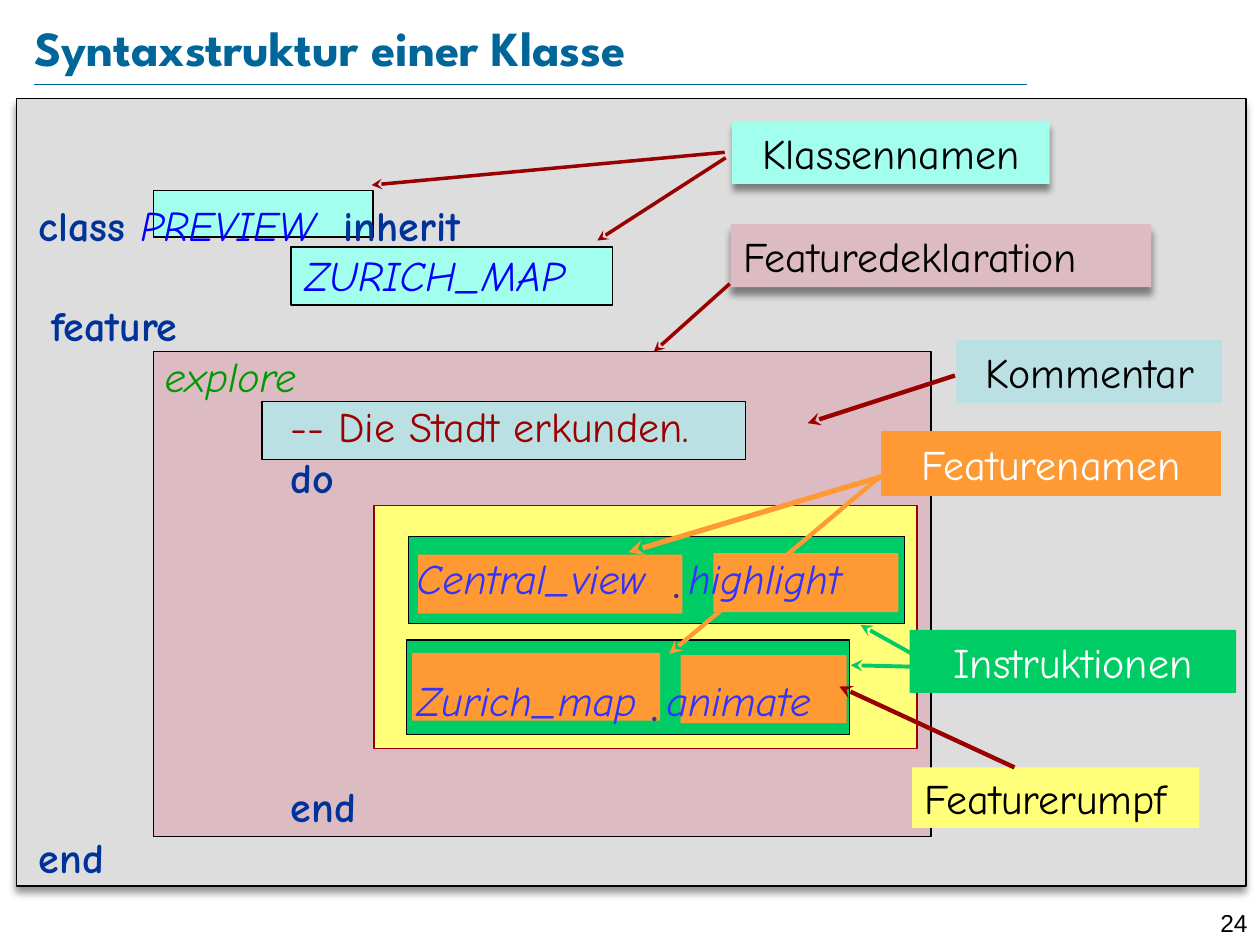
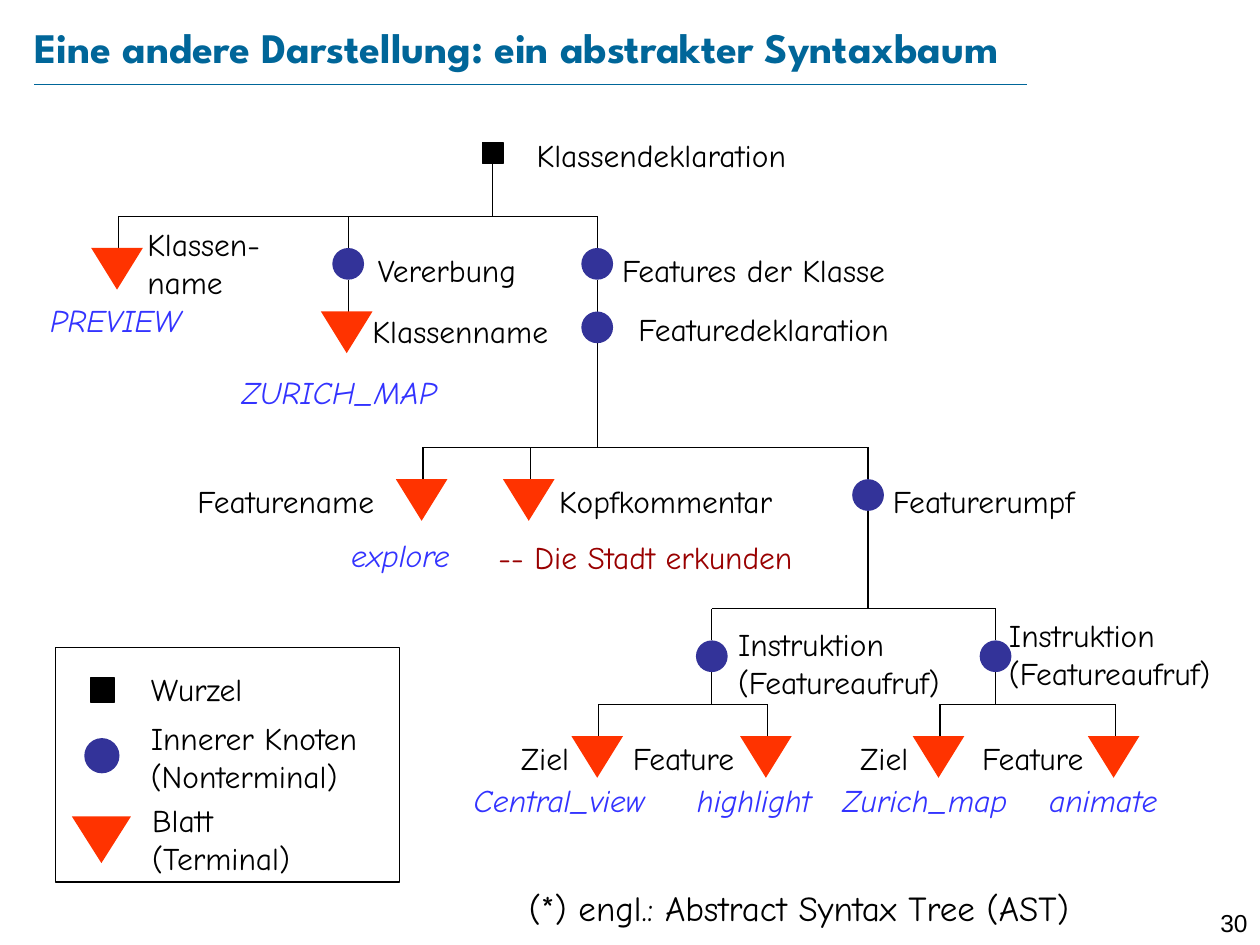
from lxml.etree import SubElement
from pptx import Presentation
from pptx.dml.color import RGBColor
from pptx.enum.shapes import MSO_CONNECTOR, MSO_SHAPE
from pptx.enum.text import MSO_ANCHOR, PP_ALIGN
from pptx.oxml.ns import qn
from pptx.util import Cm, Pt

BODY_FONT = "Comic Neue"
BLACK, WHITE = "000000", "FFFFFF"
TITLE_BLUE = "006699"
DARK_RED = "990000"
GREY = "DDDDDD"
ROSE = "DCBCC2"
AQUA = "A3FFED"
PALE_BLUE = "BBE0E3"
YELLOW = "FFFF79"
GREEN = "00CC66"
ORANGE = "FF9933"
KEYWORD_BLUE = "003399"
CLASS_BLUE = "0000FF"
NAME_BLUE = "3333FF"
NODE_BLUE = "333399"
FEATURE_GREEN = "009900"
LEAF_RED = "FF3300"

CODE_TAB = 2.54
CODE_GAP = 29
STEM = 0.64
NODE_SIZE = 0.64
LEAF_SIZE = (1.04, 0.84)


def color(hex_string):
    return RGBColor.from_string(hex_string)


def add_run(paragraph, text, size, hex_color, font=BODY_FONT, bold=False, italic=False):
    run = paragraph.add_run()
    run.text = text
    run.font.name = font
    run.font.size = Pt(size)
    run.font.bold = bold
    run.font.italic = italic
    run.font.color.rgb = color(hex_color)
    return run


def add_text(slide, text, left, top, width, height=1.02, size=18, hex_color=BLACK,
             align=PP_ALIGN.LEFT, **style):
    """Add a text box with one paragraph per line of text."""
    box = slide.shapes.add_textbox(Cm(left), Cm(top), Cm(width), Cm(height))
    frame = box.text_frame
    frame.word_wrap = True
    for index, line in enumerate(text.split("\n")):
        paragraph = frame.add_paragraph() if index else frame.paragraphs[0]
        paragraph.alignment = align
        add_run(paragraph, line, size, hex_color, **style)
    return frame


def add_box(slide, left, top, width, height, fill=None, line=None,
            kind=MSO_SHAPE.RECTANGLE, shadow=False):
    shape = slide.shapes.add_shape(kind, Cm(left), Cm(top), Cm(width), Cm(height))
    shape.shadow.inherit = False
    if fill:
        shape.fill.solid()
        shape.fill.fore_color.rgb = color(fill)
    else:
        shape.fill.background()
    if line:
        shape.line.color.rgb = color(line)
        shape.line.width = Pt(0.75)
    else:
        shape.line.fill.background()
    if shadow:
        effects = shape._element.spPr.find(qn("a:effectLst"))
        outer = SubElement(effects, qn("a:outerShdw"), blurRad=str(Pt(4)),
                           dist=str(Pt(4)), dir="5400000", rotWithShape="0")
        black = SubElement(outer, qn("a:srgbClr"), val=BLACK)
        SubElement(black, qn("a:alpha"), val="43000")
    return shape


def add_callout(slide, text, left, top, width, fill, text_color=BLACK,
                align=PP_ALIGN.CENTER, height=1.27, **look):
    shape = add_box(slide, left, top, width, height, fill, **look)
    frame = shape.text_frame
    frame.word_wrap = True
    frame.vertical_anchor = MSO_ANCHOR.MIDDLE
    paragraph = frame.paragraphs[0]
    paragraph.alignment = align
    add_run(paragraph, text, 24, text_color)


def add_line(slide, start, end, hex_color=BLACK, width=0.75, arrow=False):
    line = slide.shapes.add_connector(
        MSO_CONNECTOR.STRAIGHT, *(Cm(value) for value in (*start, *end)))
    line.line.color.rgb = color(hex_color)
    line.line.width = Pt(width)
    if arrow:
        SubElement(line.line._get_or_add_ln(), qn("a:tailEnd"), type="stealth")
    SubElement(line._element.spPr, qn("a:effectLst"))


def add_slide(presentation, title, number, title_size):
    """Add a blank slide with the shared title, rule and slide number."""
    slide = presentation.slides.add_slide(presentation.slide_layouts[6])
    add_line(slide, (0.69, 1.7), (20.7, 1.7), TITLE_BLUE, 0.25)
    add_text(slide, number, 24, 18.19, 1.4, 0.61, 14, align=PP_ALIGN.RIGHT, font="Arial")
    frame = add_text(slide, title, 0.69, 0.33, 22.07, 1.22, title_size, TITLE_BLUE,
                     font="League Spartan", bold=True)
    frame.margin_left = frame.margin_top = frame.margin_right = frame.margin_bottom = 0
    frame.vertical_anchor = MSO_ANCHOR.MIDDLE
    return slide


def keyword(text):
    return text, KEYWORD_BLUE, {"bold": True}


def name(text, hex_color=NAME_BLUE):
    return text, hex_color, {"italic": True}


def add_code(slide):
    """Add the class text; each line has tab stops, space before, spacing and runs."""
    dot = ("• ", NODE_BLUE, {})
    lines = [
        ([6.15], 0, 1.5, [keyword("class "), name("PREVIEW", CLASS_BLUE), keyword("\tinherit")]),
        ([5.36], 0, 1, [name("\tZURICH_MAP", CLASS_BLUE)]),
        ([0.25], 0, 1, [keyword("\tfeature")]),
        ([CODE_TAB], 0, 1, [name("\texplore", FEATURE_GREEN)]),
        ([2 * CODE_TAB], 0, 1, [("\t-- Die Stadt erkunden.", DARK_RED, {})]),
        ([2 * CODE_TAB], 0, 1, [keyword("\tdo")]),
        ([3 * CODE_TAB, 12.78], CODE_GAP, 1, [name("\tCentral_view\t"), dot, name("highlight")]),
        ([3 * CODE_TAB], CODE_GAP, 1.3, [name("\tZurich_map "), dot, name("animate")]),
        ([2 * CODE_TAB], CODE_GAP, 1, [keyword("\tend")]),
        ([], 0, 1, [keyword("end")]),
    ]
    box = slide.shapes.add_textbox(Cm(0.53), Cm(3.38), Cm(19.05), Cm(14.4))
    frame = box.text_frame
    frame.word_wrap = True
    for index, (stops, before, spacing, runs) in enumerate(lines):
        paragraph = frame.add_paragraph() if index else frame.paragraphs[0]
        paragraph.line_spacing = spacing
        if before:
            paragraph.space_before = Pt(before)
        if stops:
            tabs = SubElement(paragraph._p.get_or_add_pPr(), qn("a:tabLst"))
            for stop in stops:
                SubElement(tabs, qn("a:tab"), pos=str(Cm(stop)), algn="l")
        for text, hex_color, style in runs:
            run = add_run(paragraph, text, 24, hex_color, **style)
            if text == dot[0]:
                run.font._element.set("baseline", "-20000")


def build_class_structure(presentation):
    slide = add_slide(presentation, "Syntaxstruktur einer Klasse", "24", 28)

    def arrow(start, end, hex_color=DARK_RED, width=2.0):
        add_line(slide, start, end, hex_color, width, arrow=True)

    add_box(slide, 0.33, 1.98, 24.79, 15.88, GREY, BLACK, shadow=True)
    add_box(slide, 3.1, 7.09, 15.67, 9.78, ROSE, BLACK)
    add_callout(slide, "Featuredeklaration", 14.73, 4.52, 8.48, ROSE,
                align=PP_ALIGN.LEFT, shadow=True)
    arrow((14.71, 5.72), (13.18, 7.09))
    add_box(slide, 3.1, 3.84, 4.42, 0.94, AQUA, BLACK)
    add_box(slide, 5.87, 4.98, 6.48, 1.17, AQUA, BLACK)
    add_callout(slide, "Klassennamen", 14.76, 2.44, 6.4, AQUA, shadow=True)
    arrow((14.63, 3.18), (12.04, 4.85))
    add_box(slide, 5.28, 8.1, 9.75, 1.17, PALE_BLUE, BLACK)
    add_callout(slide, "Kommentar", 19.28, 6.86, 5.36, PALE_BLUE)
    arrow((19.25, 7.57), (16.28, 8.53), width=2.5)
    add_box(slide, 7.54, 10.19, 10.95, 4.9, YELLOW, DARK_RED)
    add_callout(slide, "Featurerumpf", 18.39, 15.47, 5.79, YELLOW,
                align=PP_ALIGN.LEFT, height=1.22)
    add_box(slide, 8.2, 12.9, 8.92, 1.91, GREEN, BLACK)
    add_box(slide, 8.23, 10.82, 10.01, 1.75, GREEN, BLACK)
    arrow((18.44, 13.21), (17.35, 12.6), GREEN, 2.25)
    for left, top, width, height in [(13.72, 13.21, 3.35, 1.37), (8.31, 13.16, 5, 1.37),
                                     (14.38, 11.15, 3.73, 1.19), (8.43, 11.18, 5.33, 1.19)]:
        add_box(slide, left, top, width, height, ORANGE)
    arrow((18.47, 9.4), (12.67, 11.13), ORANGE, 3)
    arrow((17.75, 9.6), (13.49, 13.18), ORANGE, 2.5)
    add_callout(slide, "Featurenamen", 17.78, 8.71, 6.83, ORANGE, WHITE, line=ORANGE)
    add_code(slide)
    arrow((14.61, 3.07), (7.49, 3.73))
    add_callout(slide, "Instruktionen", 18.34, 12.7, 6.58, GREEN, WHITE)
    arrow((20.45, 15.47), (16.92, 13.84), width=2.5)
    arrow((18.39, 13.44), (17.15, 13.41), GREEN, 2.25)


def add_root(slide, left, top, width, height):
    add_box(slide, left, top, width, height, BLACK, BLACK, MSO_SHAPE.FLOWCHART_PROCESS)


def add_circle(slide, left, top, size):
    add_box(slide, left, top, size, size, NODE_BLUE, kind=MSO_SHAPE.FLOWCHART_CONNECTOR)


def add_triangle(slide, left, top, width, height):
    add_box(slide, left, top, width, height, LEAF_RED, kind=MSO_SHAPE.FLOWCHART_MERGE)


def add_inner_node(slide, x, y):
    """Hang a circle on a stem that starts at x, y."""
    add_line(slide, (x, y), (x, y + STEM))
    add_circle(slide, x - NODE_SIZE / 2, y + STEM, NODE_SIZE)


def add_leaf(slide, x, y):
    """Hang a triangle on a stem that starts at x, y."""
    add_line(slide, (x, y), (x, y + STEM))
    add_triangle(slide, x - 0.55, y + STEM, *LEAF_SIZE)


def add_legend(slide):
    add_box(slide, 1.12, 13.06, 6.93, 4.72, line=BLACK)
    add_root(slide, 1.83, 13.67, 0.48, 0.48)
    add_circle(slide, 1.7, 14.88, 0.71)
    add_triangle(slide, 1.45, 16.46, 1.19, 0.94)
    add_text(slide, "Wurzel", 2.79, 13.39, 5)
    add_text(slide, "Innerer Knoten\n(Nonterminal)", 2.79, 14.38, 5.2, 1.8)
    add_text(slide, "Blatt\n(Terminal)", 2.82, 16.03, 5, 1.8)


def build_syntax_tree(presentation):
    slide = add_slide(presentation, "Eine andere Darstellung: ein abstrakter Syntaxbaum", "30", 24)

    # Each branch: trunk x, trunk top, bar y, then leaf and inner node positions
    branches = [
        (9.93, 3.3, 4.36, [2.39], [7.02, 12.04]),
        (12.04, 6.92, 9.02, [8.53, 10.69], [17.5]),
        (17.5, 10.3, 12.27, [], [14.35, 20.07]),
        (14.35, 13.55, 14.2, [12.07, 15.47], []),
        (20.07, 13.55, 14.2, [18.95, 22.48], []),
    ]
    for trunk, top, bar, leaves, inner_nodes in branches:
        children = leaves + inner_nodes
        add_line(slide, (trunk, top), (trunk, bar))
        add_line(slide, (min(children), bar), (max(children), bar))
        for x in leaves:
            add_leaf(slide, x, bar)
        for x in inner_nodes:
            add_inner_node(slide, x, bar)
    add_leaf(slide, 7.02, 5.64)
    add_inner_node(slide, 12.04, 5.64)
    add_root(slide, 9.73, 2.87, 0.41, 0.43)

    labels = [
        ("Klassendeklaration", 10.57, 2.62, 6.5),
        ("Klassen-name", 2.72, 4.42, 3.73),
        ("Vererbung", 7.37, 4.93, 4),
        ("Features der Klasse", 12.29, 4.93, 7),
        ("Klassenname", 7.26, 6.17, 4.5),
        ("Featuredeklaration", 12.62, 6.12, 6.5),
        ("Featurename", 3.73, 9.6, 4.6),
        ("Kopfkommentar", 11.02, 9.6, 5.64),
        ("Featurerumpf", 17.75, 9.6, 5),
        ("Instruktion\n(Featureaufruf)", 14.63, 12.47, 5.5),
        ("Instruktion\n(Featureaufruf)", 20.09, 12.29, 5.3),
        ("Ziel", 10.25, 14.78, 2),
        ("Feature", 12.51, 14.78, 3),
        ("Ziel", 17.09, 14.78, 2),
        ("Feature", 19.55, 14.78, 3),
    ]
    for text, left, top, width in labels:
        add_text(slide, text, left, top, width)

    names = [
        ("PREVIEW", 0.76, 5.94, 4),
        ("ZURICH_MAP", 4.62, 7.39, 5),
        ("explore", 6.83, 10.69, 3),
        ("Central_view", 9.3, 15.62, 4.4),
        ("highlight", 13.8, 15.62, 3.2),
        ("Zurich_map", 16.73, 15.62, 4.2),
        ("animate", 20.9, 15.62, 3.2),
    ]
    for text, left, top, width in names:
        add_text(slide, text, left, top, width, hex_color=NAME_BLUE, italic=True)
    add_text(slide, "-- Die Stadt erkunden", 9.8, 10.72, 7.5, hex_color=DARK_RED)

    add_legend(slide)
    add_text(slide, "(*) engl.: Abstract Syntax Tree (AST)", 10.41, 17.75, 13.84, size=20)


def main():
    presentation = Presentation()
    presentation.slide_width = Cm(25.4)
    presentation.slide_height = Cm(19.05)
    build_class_structure(presentation)
    build_syntax_tree(presentation)
    presentation.save("out.pptx")


if __name__ == "__main__":
    main()
